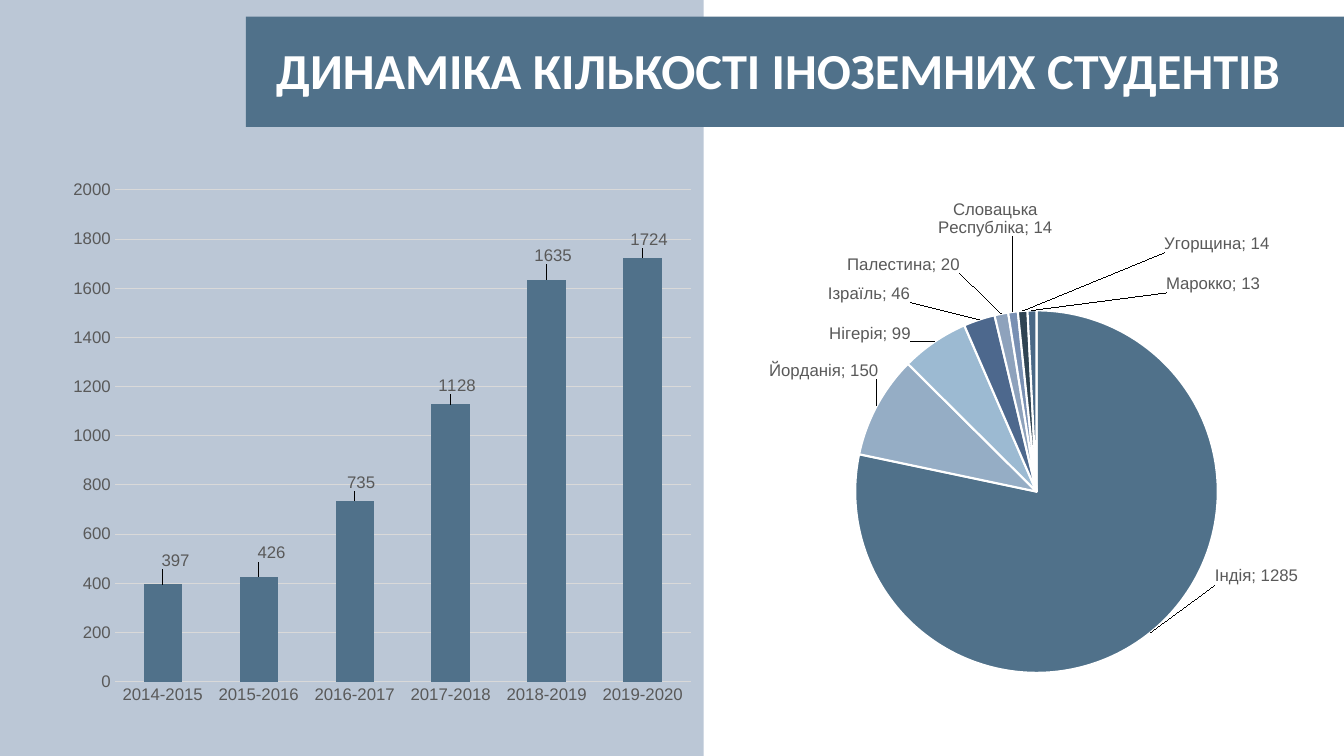
from lxml import etree
from pptx import Presentation
from pptx.chart.data import CategoryChartData
from pptx.dml.color import RGBColor
from pptx.enum.chart import XL_CHART_TYPE, XL_LABEL_POSITION, XL_TICK_MARK
from pptx.enum.shapes import MSO_SHAPE
from pptx.enum.text import MSO_ANCHOR, PP_ALIGN
from pptx.oxml.ns import qn
from pptx.util import Inches, Pt

BAR, PIE = XL_CHART_TYPE.COLUMN_CLUSTERED, XL_CHART_TYPE.PIE
OUT = XL_LABEL_POSITION.OUTSIDE_END
NONE = XL_TICK_MARK.NONE
RECT = MSO_SHAPE.RECTANGLE
LEFT, MIDDLE = PP_ALIGN.LEFT, MSO_ANCHOR.MIDDLE

WIDE, HIGH = Inches(13.33), Inches(7.5)
COLORS = {"steel": "50718A", "mist": "8EA2BC", "white": "FFFFFF",
          "gray": "595959", "grid": "D9D9D9"}
SLICES = ["50718A", "95ADC5", "9CBAD2", "4D688D",
          "8EA2BC", "7990B3", "304453", "496886"]

# Each row: category, students, label shift as shares of the chart
YEARS = [("2014-2015", 397, 0.02, -0.02), ("2015-2016", 426, 0.02, -0.02),
         ("2016-2017", 735, 0.01, -0.01), ("2017-2018", 1128, 0.01, -0.01),
         ("2018-2019", 1635, 0.01, -0.02), ("2019-2020", 1724, 0.01, -0.01)]
LANDS = [("Індія", 1285, 0.09, -0.12), ("Йорданія", 150, 0.01, -0.04),
         ("Нігерія", 99, -0.03, 0.01), ("Ізраїль", 46, -0.1, -0.02),
         ("Палестина", 20, -0.06, -0.06),
         ("Словацька Республіка", 14, 0.06, -0.12),
         ("Угорщина", 14, 0.29, -0.09), ("Марокко", 13, 0.27, -0.02)]


def rgb(code):
    return RGBColor.from_string(code)


def area(x, y, w, h):
    """Turn percents of the slide into left, top, width, height."""
    return [int(side * part / 100)
            for side, part in zip((WIDE, HIGH, WIDE, HIGH), (x, y, w, h))]


def style(font, size=12, color="gray", name="Arial", bold=False):
    font.size, font.name, font.bold = Pt(size), name, bold
    font.color.rgb = rgb(COLORS[color])


def write(frame, text, align=LEFT, **look):
    frame.word_wrap = True
    frame.vertical_anchor = MIDDLE
    par = frame.paragraphs[0]
    par.alignment = align
    run = par.add_run()
    run.text = text
    style(run.font, **look)


def panel(slide, spot, color, alpha=None):
    box = slide.shapes.add_shape(RECT, *area(*spot))
    box.shadow.inherit = False
    box.fill.solid()
    box.fill.fore_color.rgb = rgb(COLORS[color])
    box.line.fill.background()
    if alpha:
        tint = box.fill._xPr.find(".//" + qn("a:srgbClr"))
        etree.SubElement(tint, qn("a:alpha")).set("val", str(alpha * 1000))


def layout(**vals):
    """Build a manual chart layout."""
    node = etree.Element(qn("c:layout"))
    man = etree.SubElement(node, qn("c:manualLayout"))
    for key, val in vals.items():
        etree.SubElement(man, qn("c:" + key)).set("val", str(val))
    return node


def graph(slide, kind, spot, rows):
    data = CategoryChartData()
    data.categories = [row[0] for row in rows]
    data.add_series("Series 1", [row[1] for row in rows])
    chart = slide.shapes.add_chart(kind, *area(*spot), data).chart
    chart.has_legend = chart.has_title = False
    chart.font.size, chart.font.name = Pt(10), "Arial"
    return chart


def label(chart, rows, named=False):
    """Show every value, moved by the shift in its row."""
    points = chart.plots[0].series[0].points
    for idx, row in enumerate(rows):
        tag = points[idx].data_label
        tag.position = OUT
        style(tag.font)
    nodes = chart._chartSpace.iter(qn("c:dLbl"))
    for node, row in zip(list(nodes), rows):
        node.insert(1, layout(x=row[2], y=row[3]))
        if named:
            node.find(qn("c:showCatName")).set("val", "1")
            etree.SubElement(node, qn("c:separator")).text = "; "


def columns(slide):
    chart = graph(slide, BAR, (4.5, 22.5, 47.85, 72), YEARS)
    plot = chart.plots[0]
    plot.gap_width = 150
    plot.vary_by_categories = False
    fill = plot.series[0].format.fill
    fill.solid()
    fill.fore_color.rgb = rgb(COLORS["steel"])
    for axis in (chart.category_axis, chart.value_axis):
        axis.major_tick_mark = axis.minor_tick_mark = NONE
        axis.format.line.fill.background()
        style(axis.tick_labels.font)
    axis = chart.value_axis
    axis.minimum_scale, axis.maximum_scale, axis.major_unit = 0, 2000, 200
    line = axis.major_gridlines.format.line
    line.width = Pt(0.75)
    line.color.rgb = rgb(COLORS["grid"])
    label(chart, YEARS)


def pie(slide):
    chart = graph(slide, PIE, (53.64, 25.1, 49.96, 76.8), LANDS)
    points = chart.plots[0].series[0].points
    for idx, code in enumerate(SLICES):
        look = points[idx].format
        look.fill.solid()
        look.fill.fore_color.rgb = rgb(code)
        look.line.width = Pt(1.5)
        look.line.color.rgb = rgb(COLORS["white"])
    label(chart, LANDS, named=True)
    field = chart._chartSpace.find(".//" + qn("c:plotArea"))
    for old in field.findall(qn("c:layout")):
        field.remove(old)
    field.insert(0, layout(layoutTarget="inner", xMode="edge", yMode="edge",
                           x=0.2, y=0.2, w=0.54, h=0.64))


def main():
    deck = Presentation()
    deck.slide_width, deck.slide_height = WIDE, HIGH
    slide = deck.slides.add_slide(deck.slide_layouts[5])

    # Left half and title band
    panel(slide, (0, 0, 52.35, 100), "mist", alpha=60)
    panel(slide, (18.3, 2.2, 81.7, 14.6), "steel")

    # Title, raised above the band
    title = slide.shapes.title
    title.left, title.top, title.width, title.height = area(19.8, 4.4, 80.2, 9.5)
    write(title.text_frame, "ДИНАМІКА КІЛЬКОСТІ ІНОЗЕМНИХ СТУДЕНТІВ",
          size=36, color="white", name="Calibri", bold=True)
    slide.shapes._spTree.append(title._element)

    # Charts
    columns(slide)
    pie(slide)
    deck.save("out.pptx")


if __name__ == "__main__":
    main()
